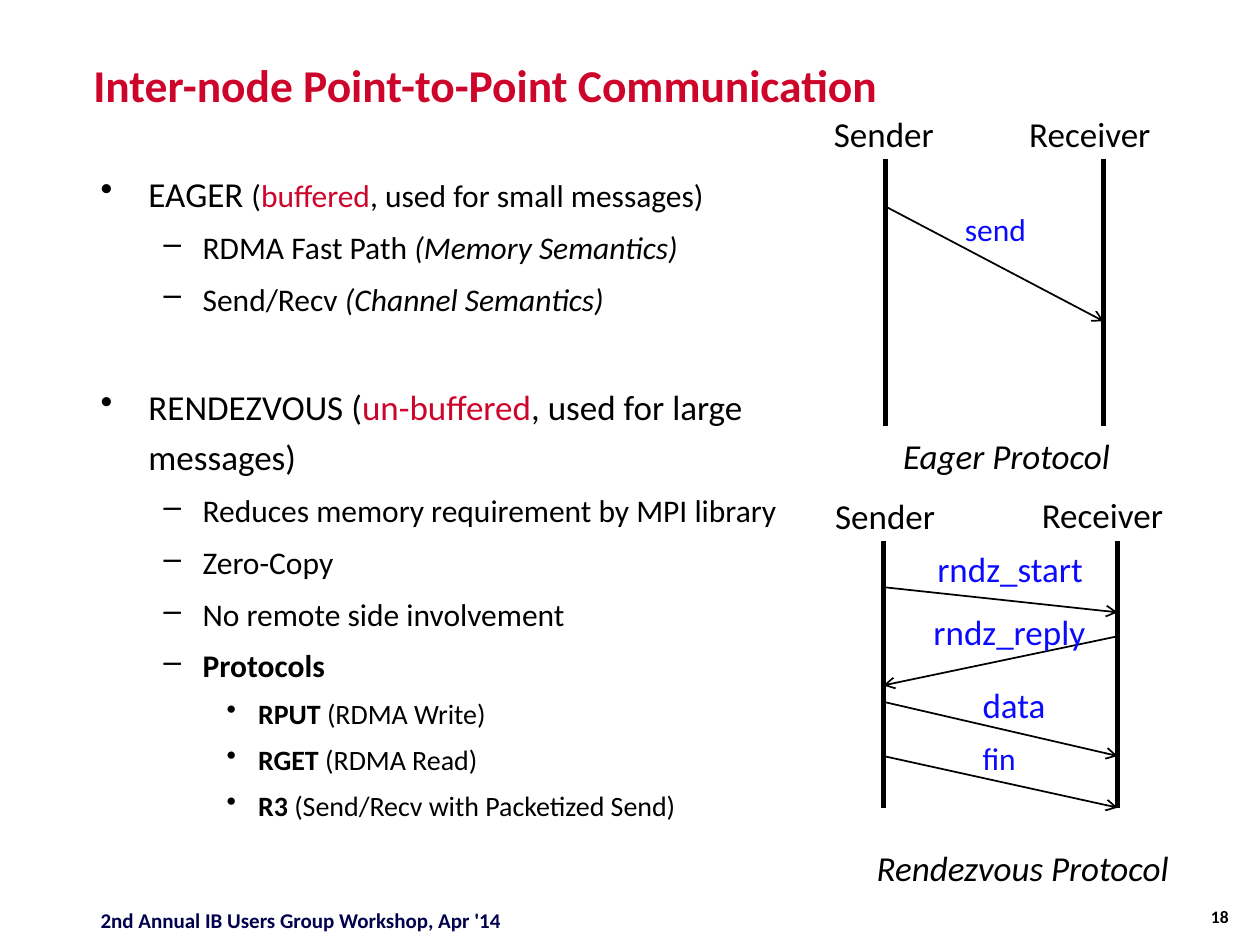
from lxml import etree
from pptx import Presentation
from pptx.dml.color import RGBColor
from pptx.enum.shapes import MSO_CONNECTOR
from pptx.enum.text import MSO_ANCHOR, MSO_AUTO_SIZE, PP_ALIGN
from pptx.oxml.ns import qn
from pptx.util import Inches, Pt

STRAIGHT = MSO_CONNECTOR.STRAIGHT
TOP, MIDDLE, BOTTOM = MSO_ANCHOR.TOP, MSO_ANCHOR.MIDDLE, MSO_ANCHOR.BOTTOM
LEFT, RIGHT = PP_ALIGN.LEFT, PP_ALIGN.RIGHT
NO_AUTOFIT = MSO_AUTO_SIZE.NONE

FONT = "Calibri"
BLACK, RED, BLUE, NAVY = "000000", "CD052B", "0A0AFF", "00004D"
LINE_SPACING = 1.2

# Per outline level: left margin, hanging indent, bullet
LEVELS = [(0.38, -0.38, "•"), (0.81, -0.31, "–"), (1.25, -0.25, "•")]

# Level, space before in points, runs of (text, size, format)
OUTLINE = [
    (0, 0, [("EAGER ", 20, {}), ("(", 18, {}), ("buffered", 18, {"color": RED}),
            (", used for small messages)", 18, {})]),
    (1, 3.6, [("RDMA Fast Path ", 18, {}), ("(Memory Semantics)", 18, {"italic": True})]),
    (1, 3.6, [("Send/Recv ", 18, {}), ("(Channel Semantics)", 18, {"italic": True})]),
    (0, 34, [("RENDEZVOUS (", 20, {}), ("un-buffered", 20, {"color": RED}),
             (", used for large messages)", 20, {})]),
    (1, 3.6, [("Reduces memory requirement by MPI library", 18, {})]),
    (1, 3.6, [("Zero-Copy", 18, {})]),
    (1, 3.6, [("No remote side involvement", 18, {})]),
    (1, 3.6, [("Protocols", 18, {"bold": True})]),
    (2, 3.2, [("RPUT ", 16, {"bold": True}), ("(RDMA Write)", 16, {})]),
    (2, 3.2, [("RGET ", 16, {"bold": True}), ("(RDMA Read)", 16, {})]),
    (2, 3.2, [("R3 ", 16, {"bold": True}), ("(Send/Recv with Packetized Send)", 16, {})]),
]

# Labels: text, box (left, top, width, height), text indent, size, format
EAGER = {
    "lifelines": (7.03, 8.76),
    "top": 1.26,
    "messages": [("right", 1.64, 2.55)],
    "labels": [
        ("Sender", (6.27, 0.78, 1.46, 0.48), 0.25, 20, {}),
        ("Receiver", (7.88, 0.78, 1.76, 0.48), 0.19, 20, {}),
        ("Eager Protocol", (7, 3.33, 2.64, 0.49), 0.07, 20, {"italic": True}),
        ("send", (7.33, 1.56, 1.27, 0.46), 0.23, 18, {"color": BLUE}),
    ],
}
RENDEZVOUS = {
    "lifelines": (7.01, 8.87),
    "top": 4.29,
    "messages": [("right", 4.66, 4.86), ("left", 5.05, 5.44),
                 ("right", 5.57, 6), ("right", 6, 6.41)],
    "labels": [
        ("Sender", (6.28, 3.81, 1.46, 0.48), 0.25, 20, {}),
        ("Receiver", (7.98, 3.8, 1.76, 0.48), 0.19, 20, {}),
        ("Rendezvous Protocol", (6.66, 6.6, 3.34, 0.51), 0.2, 20, {"italic": True}),
        ("fin", (7.47, 5.76, 1.27, 0.46), 0.23, 18, {"color": BLUE}),
        ("rndz_start", (7.09, 4.23, 2.15, 0.51), 0.25, 20, {"color": BLUE}),
        ("rndz_reply", (7.06, 4.73, 1.68, 0.49), 0.25, 20, {"color": BLUE}),
        ("data", (7.45, 5.31, 1.27, 0.49), 0.25, 20, {"color": BLUE}),
    ],
}
LIFELINE_LENGTH = 2.12


def rgb(color):
    return RGBColor.from_string(color)


def add_run(paragraph, text, size, color=BLACK, **formats):
    run = paragraph.add_run()
    run.text = text
    run.font.color.rgb = rgb(color)
    values = {"name": FONT, "size": Pt(size), "bold": False, "italic": False, **formats}
    for name, value in values.items():
        setattr(run.font, name, value)


def set_indent(paragraph, margin, indent=0, bullet=None):
    properties = paragraph._p.get_or_add_pPr()
    properties.set("marL", str(Inches(margin)))
    properties.set("indent", str(Inches(indent)))
    if bullet:
        etree.SubElement(properties, qn("a:buChar"), char=bullet)


def add_text_box(shapes, box, anchor=TOP):
    frame = shapes.add_textbox(*map(Inches, box)).text_frame
    values = {"word_wrap": True, "auto_size": NO_AUTOFIT, "vertical_anchor": anchor}
    for name, value in values.items():
        setattr(frame, name, value)
    return frame


def add_label(shapes, text, box, indent, size, formats):
    paragraph = add_text_box(shapes, box).paragraphs[0]
    set_indent(paragraph, indent)
    paragraph.line_spacing = LINE_SPACING
    add_run(paragraph, text, size, **formats)


def add_line(shapes, start, end, width, arrow=False):
    connector = shapes.add_connector(STRAIGHT, *map(Inches, start + end))
    connector.line.color.rgb = rgb(BLACK)
    connector.line.width = Pt(width)
    if arrow:
        etree.SubElement(connector.line._get_or_add_ln(), qn("a:tailEnd"), type="arrow")
    etree.SubElement(connector._element.spPr, qn("a:effectLst"))


def add_title(slide, text):
    title = slide.shapes.title
    box = {"left": 0.64, "top": 0.4, "width": 8.85, "height": 0.85}
    for name, value in box.items():
        setattr(title, name, Inches(value))
    frame = title.text_frame
    frame.auto_size = NO_AUTOFIT
    frame.vertical_anchor = TOP
    frame.paragraphs[0].alignment = LEFT
    add_run(frame.paragraphs[0], text, 26, RED, bold=True)


def add_outline(slide):
    frame = add_text_box(slide.shapes, (0.7, 1.25, 6.01, 5.37))
    for index, (level, space_before, runs) in enumerate(OUTLINE):
        paragraph = frame.add_paragraph() if index else frame.paragraphs[0]
        set_indent(paragraph, *LEVELS[level])
        paragraph.level = level
        paragraph.line_spacing = LINE_SPACING
        paragraph.space_before = Pt(space_before)
        for text, size, formats in runs:
            add_run(paragraph, text, size, **formats)


def add_sequence_diagram(slide, diagram):
    shapes = slide.shapes.add_group_shape().shapes
    sender, receiver = diagram["lifelines"]
    top = diagram["top"]
    for x in (sender, receiver):
        add_line(shapes, (x, top), (x, top + LIFELINE_LENGTH), 3)
    for direction, start, end in diagram["messages"]:
        source, target = (sender, receiver) if direction == "right" else (receiver, sender)
        add_line(shapes, (source, start), (target, end), 1, arrow=True)
    for label in diagram["labels"]:
        add_label(shapes, *label)


def add_footer(slide, text, box, size, color, alignment, anchor):
    paragraph = add_text_box(slide.shapes, box, anchor).paragraphs[0]
    paragraph.alignment = alignment
    add_run(paragraph, text, size, color, bold=True)


def main():
    presentation = Presentation()
    presentation.slide_width, presentation.slide_height = Inches(10), Inches(7.5)
    slide = presentation.slides.add_slide(presentation.slide_layouts[5])

    # Title and outline
    add_title(slide, "Inter-node Point-to-Point Communication")
    add_outline(slide)

    # Protocol diagrams
    for diagram in (EAGER, RENDEZVOUS):
        add_sequence_diagram(slide, diagram)

    # Footer and page number
    add_footer(slide, "2nd Annual IB Users Group Workshop, Apr '14",
               (0.7, 7.2, 4, 0.2), 12, NAVY, LEFT, MIDDLE)
    add_footer(slide, "18", (9.19, 7.18, 0.66, 0.23), 10, BLACK, RIGHT, BOTTOM)

    presentation.save("out.pptx")


if __name__ == "__main__":
    main()
